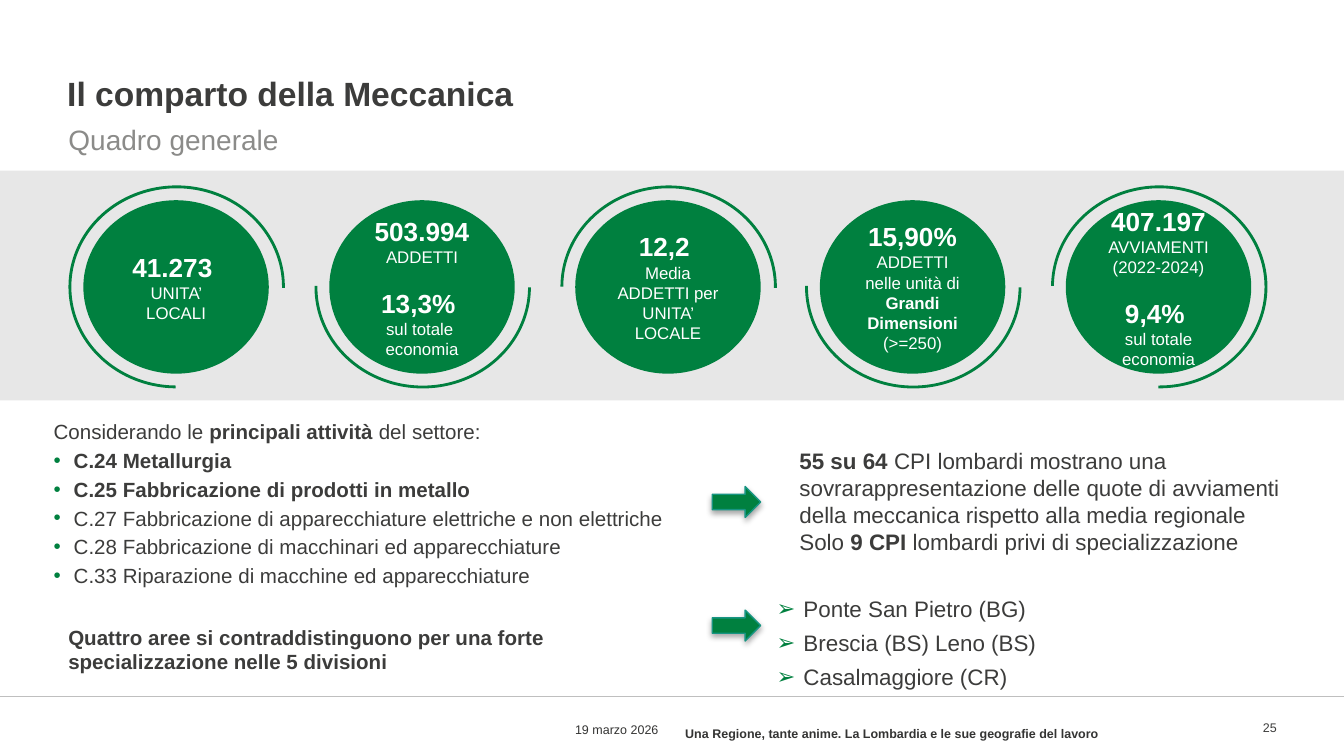
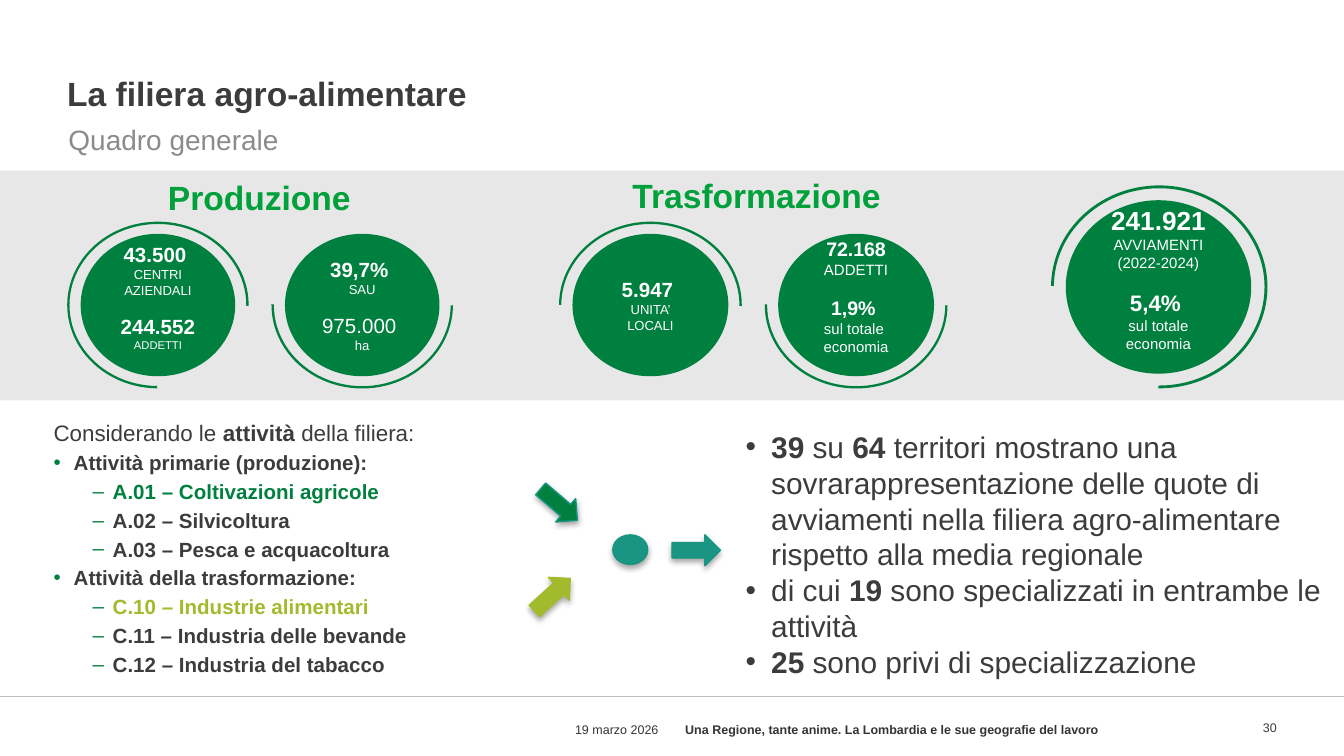
from dataclasses import dataclass
from typing import Any, Optional

import pptx
import pptx.dml.color
import pptx.enum.shapes
import pptx.enum.text
import pptx.oxml
import pptx.oxml.ns
import pptx.util

PX = 9144  # EMU per px, 100 px to the inch
SLIDE_W = 1000
FONT = "Arial"
COLORS = {
    "ink": "3C3C3B", "footer": "343433", "subtitle": "8B8B89",
    "band": "E7E7E7", "rule": "BFBFBF", "white": "FFFFFF",
    "green": "00803F", "heading": "00A13A", "teal": "1B9583",
    "teal_edge": "179582", "lime": "A2BB2C",
}
CLAIM = "Una Regione, tante anime. La Lombardia e le sue geografie del lavoro"
FOOTER_SIZE = 6.7
SHAPE = pptx.enum.shapes.MSO_SHAPE
ANCHOR = pptx.enum.text.MSO_ANCHOR
ALIGN = pptx.enum.text.PP_ALIGN
LINE_HEIGHT = 1.2

# Ring style: rotation and start angle of the block arc
RINGS = {
    "left": (0, 54.336), "right": (90, 54.336),
    "upper": (0, 108.088), "lower": (180, 108.088),
}


@dataclass(frozen=True)
class Box:
    left: int
    top: int
    width: int
    height: int

    def emu(self) -> tuple[int, ...]:
        return tuple(v * PX for v in (self.left, self.top, self.width, self.height))


@dataclass(frozen=True)
class Para:
    """One paragraph; ** switches bold on and off."""
    text: str
    size: float
    color: str = "ink"
    align: Any = ALIGN.LEFT
    before: float = 0
    spacing: Optional[float] = None
    bullet: str = ""
    bullet_color: str = "green"
    level: int = 0
    margin: int = 0
    hang: int = 0


@dataclass(frozen=True)
class Figure:
    """A disc with a ring; blank is the size of an empty line below the text."""
    disc: Box
    ring: str
    lines: tuple[Para, ...]
    blank: float = 0


@dataclass(frozen=True)
class Marker:
    box: Box
    fill: str = "green"
    edge: str = "teal_edge"
    rotation: float = 0
    kind: Any = SHAPE.RIGHT_ARROW


# Shared helpers
def apply(target: Any, values: dict[str, Any]) -> None:
    for name, value in values.items():
        setattr(target, name, value)


def rgb(name: str) -> pptx.dml.color.RGBColor:
    return pptx.dml.color.RGBColor.from_string(COLORS[name])


def add_xml(parent: Any, xml: str) -> None:
    ns = pptx.oxml.ns.nsdecls("a")
    parent.append(pptx.oxml.parse_xml(xml.replace(" ", f" {ns} ", 1)))


def write(shape: Any, paras: list[Para], insets: tuple[int, ...] = (10, 5, 10, 5),
          anchor: Any = ANCHOR.TOP) -> None:
    frame = shape.text_frame
    sides = ("margin_left", "margin_top", "margin_right", "margin_bottom")
    apply(frame, {"word_wrap": True, "auto_size": pptx.enum.text.MSO_AUTO_SIZE.NONE,
                  "vertical_anchor": anchor,
                  **{side: px * PX for side, px in zip(sides, insets)}})
    for index, para in enumerate(paras):
        p = frame.add_paragraph() if index else frame.paragraphs[0]
        if para.bullet:
            ppr = p._p.get_or_add_pPr()
            ppr.set("marL", str(para.margin * PX))
            ppr.set("indent", str(-para.hang * PX))
            add_xml(ppr, f'<a:buClr ><a:srgbClr val="{COLORS[para.bullet_color]}"/></a:buClr>')
            add_xml(ppr, f'<a:buFont typeface="{FONT}"/>')
            add_xml(ppr, f'<a:buChar char="{para.bullet}"/>')
        apply(p, {"alignment": para.align, "level": para.level,
                  "space_before": pptx.util.Pt(para.before if index else 0)})
        if para.spacing:
            p.line_spacing = para.spacing
        for part, text in enumerate(para.text.split("**")):
            if text:
                run = p.add_run()
                run.text = text
                apply(run.font, {"name": FONT, "size": pptx.util.Pt(para.size),
                                 "bold": part % 2 == 1})
                run.font.color.rgb = rgb(para.color)


def add_text(slide: Any, box: Box, paras: list[Para], **options: Any) -> None:
    write(slide.shapes.add_textbox(*box.emu()), paras, **options)


def add_filled(slide: Any, kind: Any, box: Box, fill: str) -> Any:
    shape = slide.shapes.add_shape(kind, *box.emu())
    shape.shadow.inherit = False
    shape.fill.solid()
    shape.fill.fore_color.rgb = rgb(fill)
    shape.line.fill.background()
    return shape


def add_figure(slide: Any, figure: Figure) -> None:
    disc = figure.disc
    blank = round(figure.blank * LINE_HEIGHT * 100 / 72)
    write(add_filled(slide, SHAPE.OVAL, disc, "green"), list(figure.lines),
          insets=(10, 5, 10, 5 + blank), anchor=ANCHOR.MIDDLE)
    rotation, start = RINGS[figure.ring]
    width, height = round(disc.width * 1.17), round(disc.height * 1.17)
    if rotation == 90:
        width, height = height, width
    ring = add_filled(slide, SHAPE.BLOCK_ARC, Box(
        disc.left + (disc.width - width + 1) // 2, disc.top + (disc.height - height) // 2,
        width, height), "green")
    ring.rotation = rotation
    for index, value in enumerate((start, 0.324, 0.014)):
        ring.adjustments[index] = value


def add_marker(slide: Any, marker: Marker) -> None:
    shape = add_filled(slide, marker.kind, marker.box, marker.fill)
    shape.rotation = marker.rotation
    shape.line.color.rgb = rgb(marker.edge)
    shape.line.width = pptx.util.Pt(0.75)
    effects = shape._element.spPr.find(pptx.oxml.ns.qn("a:effectLst"))
    add_xml(effects, '<a:outerShdw blurRad="40000" dist="23000" dir="5400000" rotWithShape="0">'
                     '<a:srgbClr val="000000"><a:alpha val="35000"/></a:srgbClr></a:outerShdw>')


def add_page(deck: Any, title: str, number: str, claim: Box) -> Any:
    """Title, subtitle, grey band and footer of every slide."""
    slide = deck.slides.add_slide(deck.slide_layouts[5])
    rule = slide.shapes.add_connector(pptx.enum.shapes.MSO_CONNECTOR.STRAIGHT,
                                      0, 518 * PX, SLIDE_W * PX, 518 * PX)
    rule.line.color.rgb = rgb("rule")
    rule.line.width = pptx.util.Pt(0.25)
    add_xml(rule._element.spPr, "<a:effectLst />")
    add_filled(slide, SHAPE.RECTANGLE, Box(0, 127, SLIDE_W, 171), "band")

    heading = slide.shapes.title
    apply(heading, dict(zip(("left", "top", "width", "height"), Box(50, 0, 900, 89).emu())))
    write(heading, [Para(f"**{title}**", 18)], insets=(0, 5, 10, 5), anchor=ANCHOR.BOTTOM)
    add_text(slide, Box(51, 84, 534, 44),
             [Para("Quadro generale", 15, "subtitle", spacing=1.1)], insets=(0, 5, 10, 5))

    add_text(slide, Box(909, 529, 41, 30), [Para(number, FOOTER_SIZE, align=ALIGN.RIGHT)],
             insets=(10, 0, 0, 5), anchor=ANCHOR.MIDDLE)
    add_text(slide, Box(267, 528, 233, 30),
             [Para("19 marzo 2026", FOOTER_SIZE, "footer", ALIGN.RIGHT)],
             insets=(0, 5, 10, 5), anchor=ANCHOR.MIDDLE)
    add_text(slide, claim, [Para(f"**{CLAIM}**", FOOTER_SIZE, "footer")], anchor=ANCHOR.MIDDLE)
    return slide


# Paragraph kinds
def label(text: str, size: float, blank: float = 0) -> Para:
    """Centred white line, preceded by the height of an empty line of size blank."""
    return Para(text, size, "white", ALIGN.CENTER, before=blank * LINE_HEIGHT)


def item(text: str) -> Para:
    return Para(text, 11, before=2.2, bullet="•", margin=15, hang=15)


def subitem(text: str, color: str = "ink") -> Para:
    return Para(f"**{text}**", 11, color, before=2.2, bullet="–", level=1, margin=44, hang=15)


def place(text: str) -> Para:
    return Para(text, 12, align=ALIGN.JUSTIFY, before=2.4, spacing=1.1,
                bullet="➢", level=4, margin=558, hang=20)


def finding(text: str) -> Para:
    return Para(text, 16, bullet="•", bullet_color="ink", margin=19, hang=19)


def big_disc(column: int) -> Box:
    return Box(round(62 + 182.75 * column), 149, 138, 129)


def small_disc(left: int, width: int) -> Box:
    return Box(left, 174, width, 106)


def build_mechanics(deck: Any) -> None:
    slide = add_page(deck, "Il comparto della Meccanica", "25", Box(500, 530, 381, 31))

    # Key figures
    figures = [
        ("left", (label("**41.273 **", 14), label("UNITA’ LOCALI", 9))),
        ("lower", (label("**503.994**", 14), label("ADDETTI", 9),
                   label("**13,3% **", 14, blank=9),
                   label("sul totale ", 9), label("economia", 9))),
        ("upper", (label("**12,2 **", 14), label("Media ADDETTI per UNITA’ LOCALE", 9))),
        ("lower", (label("**15,90%**", 14),
                   label("ADDETTI nelle unità di **Grandi Dimensioni**", 9),
                   label("(>=250)", 9))),
        ("right", (label("**407.197**", 14), label("AVVIAMENTI", 9), label("(2022-2024)", 9),
                   label("**9,4% **", 14, blank=9), label("sul totale economia", 9))),
    ]
    for column, (ring, lines) in enumerate(figures):
        add_figure(slide, Figure(big_disc(column), ring, lines))

    # Activities and areas
    add_text(slide, Box(30, 307, 938, 214), [
        Para("Considerando le **principali attività** del settore:", 11),
        item("**C.24 Metallurgia**"),
        item("**C.25 Fabbricazione di prodotti in metallo**"),
        item("C.27 Fabbricazione di apparecchiature elettriche e non elettriche"),
        item("C.28 Fabbricazione di macchinari ed apparecchiature"),
        item("C.33 Riparazione di macchine ed apparecchiature"),
        place("Ponte San Pietro (BG)"),
        place("Brescia (BS) Leno (BS)"),
        place("Casalmaggiore (CR)"),
    ])
    add_text(slide, Box(585, 328, 383, 91), [
        Para("**55 su 64 **CPI lombardi mostrano una sovrarappresentazione delle quote "
             "di avviamenti della meccanica rispetto alla media regionale", 12),
        Para("Solo **9 CPI **lombardi privi di specializzazione", 12),
    ])
    add_text(slide, Box(41, 460, 440, 47), [
        Para("**Quattro aree si contraddistinguono per una forte specializzazione "
             "nelle 5 divisioni**", 11),
    ])
    for top in (362, 454):
        add_marker(slide, Marker(Box(530, top, 36, 23)))


def build_food(deck: Any) -> None:
    slide = add_page(deck, "La filiera agro-alimentare", "30", Box(500, 528, 368, 30))

    # Key figures
    for figure in (
        Figure(big_disc(4), "right", (
            label("**241.921**", 14), label("AVVIAMENTI", 8), label("(2022-2024)", 8),
            label("**5,4% **", 12, blank=8), label("sul totale economia", 8)), blank=8),
        Figure(small_disc(60, 115), "left", (
            label("**43.500 **", 11), label("CENTRI AZIENDALI", 7),
            label("**244.552**", 11, blank=7), label("ADDETTI", 6)), blank=7),
        Figure(small_disc(212, 115), "lower", (
            label("**39,7% **", 11), label("SAU", 7),
            label("975.000 ", 11, blank=7), label("ha", 7))),
        Figure(small_disc(426, 116), "upper", (
            label("**5.947 **", 11), label("UNITA’ LOCALI", 7))),
        Figure(small_disc(579, 116), "lower", (
            label("**72.168**", 10.5), label("ADDETTI", 8),
            label("**1,9% **", 10.5, blank=8),
            label("sul totale ", 8), label("economia", 8)), blank=8),
    ):
        add_figure(slide, figure)
    for left, top, stage in ((78, 127, "Produzione"), (448, 125, "Trasformazione")):
        add_text(slide, Box(left, top, 230, 42),
                 [Para(f"**{stage}**", 18, "heading", ALIGN.CENTER)])

    # Activities and findings
    add_text(slide, Box(30, 307, 459, 214), [
        Para("Considerando le **attività** della filiera:", 12),
        item("**Attività primarie (produzione):**"),
        subitem("A.01 – Coltivazioni agricole", "green"),
        subitem("A.02 – Silvicoltura"),
        subitem("A.03 – Pesca e acquacoltura"),
        item("**Attività della trasformazione:**"),
        subitem("C.10 – Industrie alimentari", "lime"),
        subitem("C.11 – Industria delle bevande"),
        subitem("C.12 – Industria del tabacco"),
    ])
    add_text(slide, Box(545, 314, 474, 199), [
        finding("**39** su **64 **territori mostrano una sovrarappresentazione delle quote "
                "di avviamenti nella filiera agro-alimentare rispetto alla media regionale"),
        finding("di cui **19 **sono specializzati in entrambe le attività"),
        finding("**25** sono privi di specializzazione"),
    ])

    # Two activities merging into one result
    for marker in (
        Marker(Box(500, 398, 36, 23), "teal"),
        Marker(Box(398, 364, 36, 23), rotation=40.5),
        Marker(Box(393, 431, 36, 23), "lime", "lime", 317.8),
        Marker(Box(456, 398, 26, 22), "teal", kind=SHAPE.OVAL),
    ):
        add_marker(slide, marker)


def main() -> None:
    deck = pptx.Presentation()
    width = SLIDE_W * PX
    apply(deck, {"slide_width": width, "slide_height": width * 9 // 16})
    build_mechanics(deck)
    build_food(deck)
    deck.save("out.pptx")


if __name__ == "__main__":
    main()
